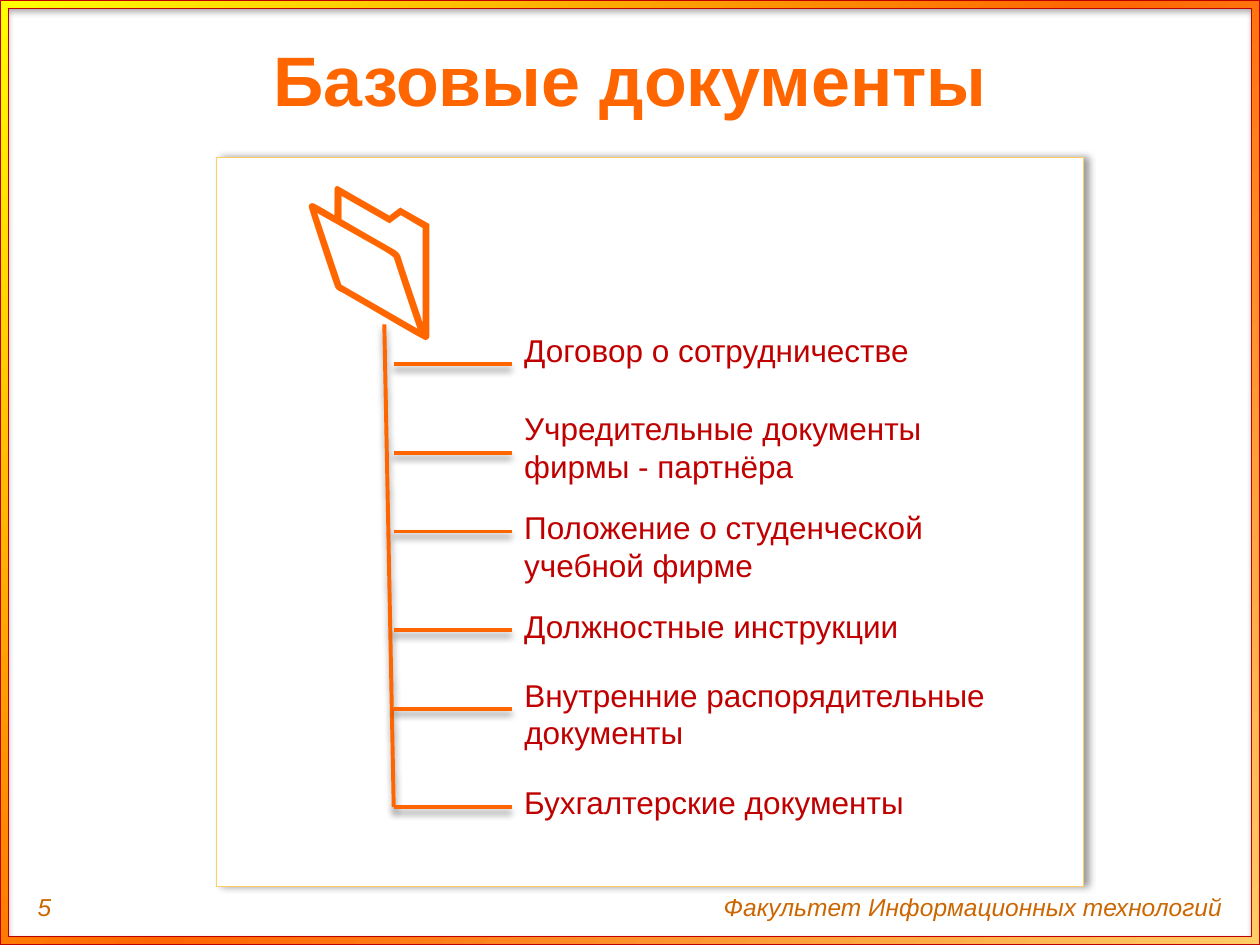
"""Build the slide listing the basic documents of a student training firm."""
from lxml import etree
from pptx import Presentation
from pptx.dml.color import RGBColor
from pptx.enum.shapes import MSO_CONNECTOR, MSO_SHAPE
from pptx.enum.text import MSO_ANCHOR, PP_ALIGN
from pptx.oxml import parse_xml
from pptx.util import Inches, Pt

STRAIGHT = MSO_CONNECTOR.STRAIGHT
FRAME, RECTANGLE = MSO_SHAPE.FRAME, MSO_SHAPE.RECTANGLE
MIDDLE, TOP = MSO_ANCHOR.MIDDLE, MSO_ANCHOR.TOP
LEFT, CENTER = PP_ALIGN.LEFT, PP_ALIGN.CENTER
NS = 'xmlns:a="http://schemas.openxmlformats.org/drawingml/2006/main"'

THEME = {
    "orange": "FF6600", "red": "C00000", "amber": "FFCC66", "yellow": "FFFF00",
    "title": {"size": Pt(40), "bold": True, "italic": False, "color": "FF6600"},
    "icon": {"size": Pt(96), "bold": True, "italic": False, "color": "FF6600"},
    "item": {"size": Pt(18), "bold": False, "italic": False, "color": "C00000"},
    "footer": {"size": Pt(14), "bold": False, "italic": True, "color": "CC6600"},
}

deck = Presentation()
deck.slide_width, deck.slide_height = Inches(10), Inches(7.5)
UNIT = deck.slide_width / 16


def write(box, area, text, style, align=LEFT, anchor=TOP):
    """Place a text box on the grid, fill it and return its run."""
    for name, value in zip(("left", "top", "width", "height"), area):
        setattr(box, name, round(value * UNIT))
    frame = box.text_frame
    frame.word_wrap, frame.vertical_anchor = True, anchor
    para = frame.paragraphs[0]
    para.alignment = align
    span = para.add_run()
    span.text = text
    span.font.name = "Arial"
    for name in ("size", "bold", "italic"):
        setattr(span.font, name, THEME[style][name])
    span.font.color.rgb = RGBColor.from_string(THEME[style]["color"])
    return span


def outline(shape, color, width, alpha, blur, distance, angle):
    """Give a shape or connector its line and an outer shadow."""
    shape.line.color.rgb = RGBColor.from_string(THEME[color])
    shape.line.width = Pt(width)
    shape._element.spPr.append(parse_xml(
        f'<a:effectLst {NS}><a:outerShdw blurRad="{Pt(blur)}" dist="{Pt(distance)}" '
        f'dir="{angle * 60000}" rotWithShape="0"><a:srgbClr val="000000">'
        f'<a:alpha val="{alpha * 1000}"/></a:srgbClr></a:outerShdw></a:effectLst>'))


page = deck.slides.add_slide(deck.slide_layouts[5])
write(page.shapes.title, (0, 0, 16, 2), "Базовые документы", "title", CENTER, MIDDLE)

border = page.shapes.add_shape(FRAME, 0, 0, deck.slide_width, deck.slide_height)
border.adjustments[0] = 0.009
border.fill.background()
stops = "".join(
    f'<a:gs pos="{place * 1000}"><a:srgbClr val="{THEME[color]}"/></a:gs>'
    for place, color in ((0, "yellow"), (50, "orange"), (100, "amber")))
properties = border._element.spPr
properties.replace(properties.find("{*}noFill"), parse_xml(
    f'<a:gradFill {NS} rotWithShape="1"><a:gsLst>{stops}</a:gsLst><a:path path="circle">'
    '<a:fillToRect r="100000" b="100000"/></a:path></a:gradFill>'))
outline(border, "red", 0.75, 35, 3.1, 1.8, 90)

footer = page.shapes.add_textbox(0, 0, 0, 0)
tabs = footer.text_frame.paragraphs[0]._p.get_or_add_pPr()
tabs.append(parse_xml(
    f'<a:tabLst {NS}><a:tab pos="{Inches(9.42)}" algn="r"/></a:tabLst>'))
write(footer, (0.32, 11.25, 15.36, 0.5), "5\tФакультет Информационных технологий", "footer")

panel = page.shapes.add_shape(
    RECTANGLE, *(round(value * UNIT) for value in (2.75, 2, 11, 9.25)))
panel.fill.solid()
panel.fill.fore_color.rgb = RGBColor(255, 255, 255)
outline(panel, "amber", 0.25, 40, 4, 3, 0)

folder = write(page.shapes.add_textbox(0, 0, 0, 0), (3, 1.75, 3.38, 2.75), "📂", "icon", CENTER)
edge = etree.fromstring(
    f'<a:ln {NS} w="{Pt(1.4)}"><a:solidFill><a:srgbClr val="FDFEFE"/></a:solidFill></a:ln>')
folder.font._element.insert(0, edge)

DOCUMENTS = [
    ("Договор о сотрудничестве", 4.12, 4.62, 5.75, 0.64),
    ("Учредительные документы фирмы - партнёра", 5.12, 5.75, 5.75, 1.14),
    ("Положение о студенческой учебной фирме", 6.37, 6.75, 5.75, 1.14),
    ("Должностные инструкции", 7.63, 8, 5.75, 0.64),
    ("Внутренние распорядительные документы", 8.5, 9, 6.5, 1.14),
    ("Бухгалтерские документы", 9.87, 10.25, 5.75, 0.64),
]
branches = [(4.88, 4.12, 5, 10.25)]
for label, top, level, width, height in DOCUMENTS:
    write(page.shapes.add_textbox(0, 0, 0, 0), (6.5, top, width, height), label, "item")
    branches.append((5, level, 6.5, level))

tree = page.shapes.add_group_shape()
for ends in branches:
    branch = tree.shapes.add_connector(STRAIGHT, *(round(value * UNIT) for value in ends))
    outline(branch, "orange", 2.25, 40, 4, 3, 90)

deck.save("out.pptx")
